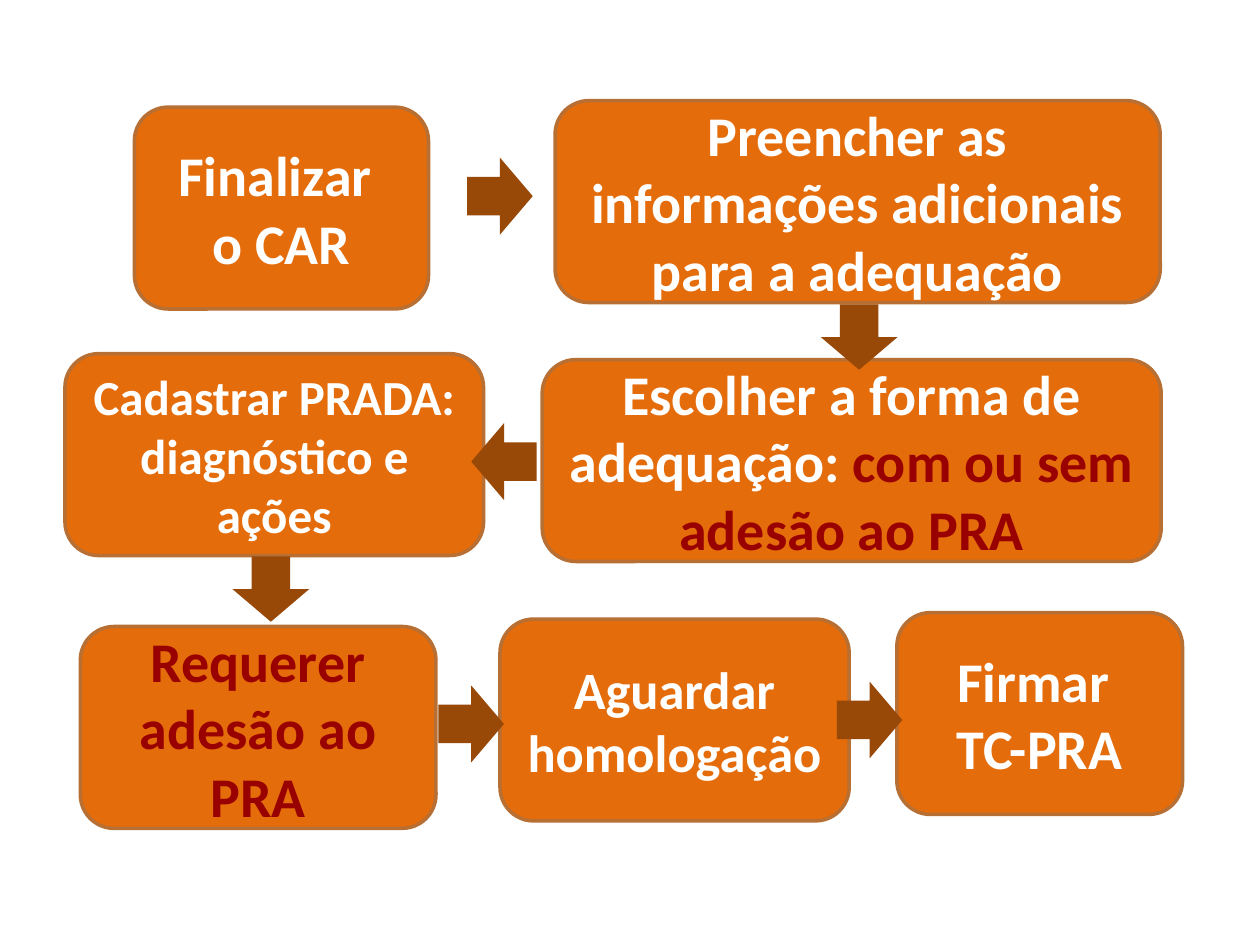
import pptx
import pptx.util
import pptx.dml.color
import pptx.enum.shapes
import pptx.enum.text

Cm = pptx.util.Cm
Pt = pptx.util.Pt
RGBColor = pptx.dml.color.RGBColor
MSO_SHAPE = pptx.enum.shapes.MSO_SHAPE

ORANGE = RGBColor(0xE4, 0x6C, 0x0A)
BORDER = RGBColor(0xB7, 0x6F, 0x34)
BROWN = RGBColor(0x98, 0x48, 0x07)
WHITE = RGBColor(0xFF, 0xFF, 0xFF)
RED = RGBColor(0x99, 0x00, 0x00)

STEP_HEIGHT = 4.07
ARROW_LENGTH, ARROW_WIDTH = 1.32, 1.55
RIGHT, DOWN, LEFT = 0, 90, 180
BREAK = None

# left, top, width, font size, paragraphs of (text, colour) runs
STEPS = [
    (2.71, 2.16, 5.93, 32, [[("Finalizar ", WHITE), BREAK, ("o CAR", WHITE)]]),
    (11.19, 2.03, 12.2, 32,
     [[("Preencher as informações adicionais para a adequação", WHITE)]]),
    (10.93, 7.25, 12.48, 32,
     [[("Escolher a forma de adequação: ", WHITE), ("com ou sem adesão ao PRA", RED)]]),
    (1.31, 7.13, 8.44, 28,
     [[("Cadastrar PRADA:", WHITE)], [("diagnóstico e ações", WHITE)]]),
    (1.62, 12.63, 7.17, 32, [[("Requerer adesão ao PRA", RED)]]),
    (10.08, 12.48, 7.04, 30, [[("Aguardar homologação", WHITE)]]),
    (18.08, 12.35, 5.76, 32, [[("Firmar ", WHITE), BREAK, ("TC-PRA", WHITE)]]),
]

ARROWS = [
    (9.42, 3.18, RIGHT),
    (16.66, 6.02, DOWN),
    (9.5, 8.53, LEFT),
    (4.8, 11.1, DOWN),
    (8.84, 13.82, RIGHT),
    (16.87, 13.74, RIGHT),
]


def add_filled_shape(slide, kind, left, top, width, height, colour):
    shape = slide.shapes.add_shape(kind, Cm(left), Cm(top), Cm(width), Cm(height))
    shape.shadow.inherit = False
    shape.fill.solid()
    shape.fill.fore_color.rgb = colour
    return shape


def add_step(slide, left, top, width, size, paragraphs):
    shape = add_filled_shape(
        slide, MSO_SHAPE.ROUNDED_RECTANGLE, left, top, width, STEP_HEIGHT, ORANGE)
    shape.line.color.rgb = BORDER
    shape.line.width = Pt(2)
    frame = shape.text_frame
    frame.word_wrap = True
    frame.vertical_anchor = pptx.enum.text.MSO_ANCHOR.MIDDLE
    for index, parts in enumerate(paragraphs):
        paragraph = frame.add_paragraph() if index else frame.paragraphs[0]
        paragraph.alignment = pptx.enum.text.PP_ALIGN.CENTER
        for part in parts:
            if part is BREAK:
                paragraph.add_line_break()
                continue
            text, colour = part
            run = paragraph.add_run()
            run.text = text
            run.font.name = "Calibri"
            run.font.size = Pt(size)
            run.font.bold = True
            run.font.color.rgb = colour


def add_arrow(slide, left, top, rotation):
    shape = add_filled_shape(
        slide, MSO_SHAPE.RIGHT_ARROW, left, top, ARROW_LENGTH, ARROW_WIDTH, BROWN)
    shape.line.fill.background()
    shape.rotation = rotation


def main():
    presentation = pptx.Presentation()
    presentation.slide_width = Cm(25.4)
    presentation.slide_height = Cm(19.05)
    slide = presentation.slides.add_slide(presentation.slide_layouts[6])
    for step in STEPS:
        add_step(slide, *step)
    for arrow in ARROWS:
        add_arrow(slide, *arrow)
    presentation.save("out.pptx")


if __name__ == "__main__":
    main()
